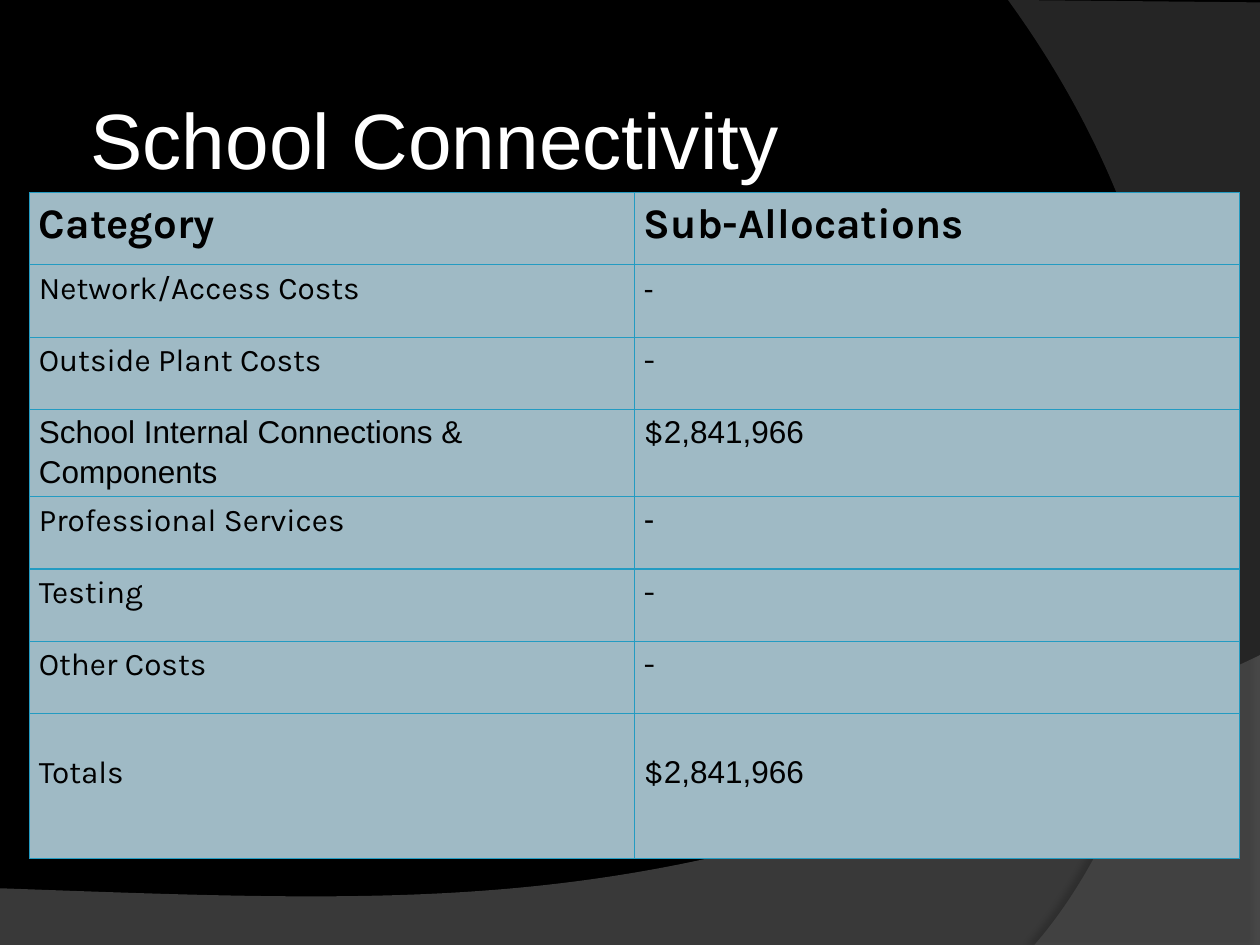
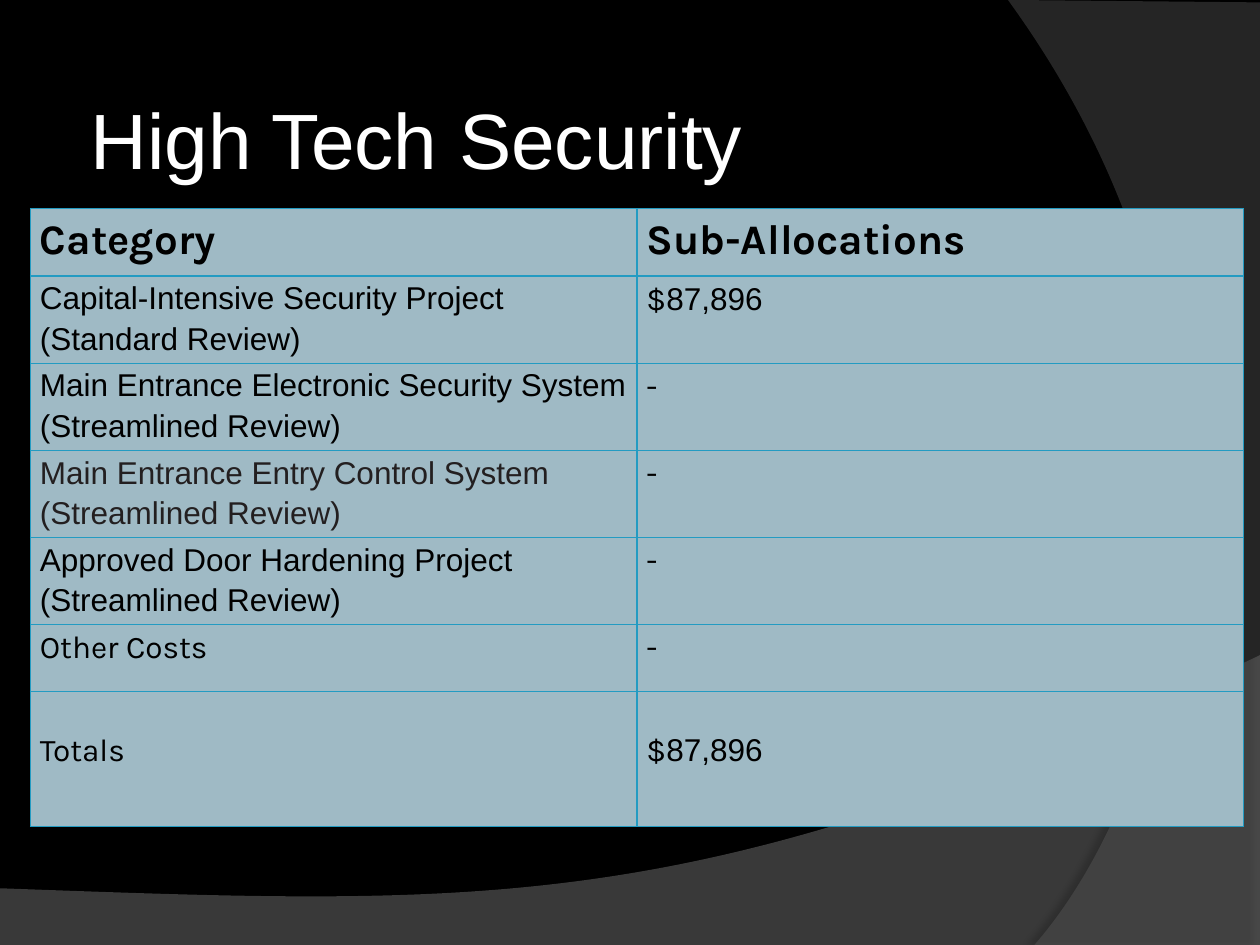
from dataclasses import dataclass

from lxml import etree
from pptx import Presentation
from pptx.dml.color import RGBColor
from pptx.enum import text
from pptx.oxml import ns
from pptx.util import Pt

BLACK = RGBColor(0x00, 0x00, 0x00)
WHITE = RGBColor(0xFF, 0xFF, 0xFF)
CHARCOAL = RGBColor(0x23, 0x1F, 0x20)
BAND_GRAY = RGBColor(0x7F, 0x7F, 0x7F)
FOLD_GRAY = RGBColor(0x5E, 0x5E, 0x5E)
CELL_BLUE = RGBColor(0x9F, 0xBA, 0xC5)
GRID_BLUE = RGBColor(0x23, 0x9B, 0xC2)

KARLA, ARIAL, CALIBRI = "Karla", "Arial", "Calibri"
SLIDE_W, SLIDE_H = 720, 540
TOTALS_GAP = 20


@dataclass
class Entry:
    """One cost category and its sub-allocation."""
    label: str
    amount: str = "-"
    label_font: str = KARLA
    amount_font: str = KARLA
    label_color: RGBColor = BLACK


CONNECTIVITY = [
    Entry("Network/Access Costs", amount_font=CALIBRI),
    Entry("Outside Plant Costs"),
    Entry("School Internal Connections & Components", "$2,841,966", ARIAL),
    Entry("Professional Services", amount_font=ARIAL),
    Entry("Testing"),
    Entry("Other Costs"),
    Entry("Totals", "$2,841,966"),
]
SECURITY = [
    Entry("Capital-Intensive Security Project (Standard Review)", "$87,896", ARIAL),
    Entry("Main Entrance Electronic Security System (Streamlined Review)",
          label_font=ARIAL),
    Entry("Main Entrance Entry Control System (Streamlined Review)",
          label_font=ARIAL, label_color=CHARCOAL),
    Entry("Approved Door Hardening Project (Streamlined Review)",
          label_font=ARIAL),
    Entry("Other Costs"),
    Entry("Totals", "$87,896"),
]


def add_child(parent, tag, **attributes):
    child = etree.SubElement(parent, ns.qn(tag))
    for name, value in attributes.items():
        child.set(name, str(value))
    return child


def add_color(parent, color, opacity=100):
    node = add_child(parent, "a:srgbClr", val=color)
    add_child(node, "a:alpha", val=opacity * 1000)


def bend_last_segment(swoosh, controls):
    """Turn the last straight segment into a cubic Bezier curve."""
    segment = swoosh._element.findall(".//" + ns.qn("a:lnTo"))[-1]
    bend = etree.Element(ns.qn("a:cubicBezTo"))
    for x, y in controls:
        add_child(bend, "a:pt", x=Pt(x) - swoosh.left, y=Pt(y) - swoosh.top)
    bend.append(segment[0])
    segment.getparent().replace(segment, bend)


def add_swoosh(slide, corners, controls, color, opacity,
               shadow_opacity, distance, angle):
    """Translucent panel with one curved edge and a soft shadow."""
    points = [(Pt(x), Pt(y)) for x, y in corners]
    builder = slide.shapes.build_freeform(*points[0])
    builder.add_line_segments(points[1:], close=True)
    swoosh = builder.convert_to_shape()
    bend_last_segment(swoosh, controls)
    swoosh.fill.solid()
    swoosh.fill.fore_color.rgb = color
    tint = swoosh._element.spPr.find(ns.qn("a:solidFill"))[0]
    add_child(tint, "a:alpha", val=opacity * 1000)
    swoosh.line.fill.background()
    swoosh.shadow.inherit = False
    effects = swoosh._element.spPr.find(ns.qn("a:effectLst"))
    shadow = add_child(effects, "a:outerShdw", blurRad=Pt(4), dist=Pt(distance),
                       dir=angle * 60000, algn="ctr", rotWithShape=0)
    add_color(shadow, BLACK, shadow_opacity)


def add_backdrop(slide):
    slide.background.fill.solid()
    slide.background.fill.fore_color.rgb = BLACK
    add_swoosh(slide,
               [(0, 507.6), (0, SLIDE_H), (SLIDE_W, SLIDE_H),
                (SLIDE_W, 374.4), (0, 507.6)],
               [(402.5, 524.9), (281.5, 517.7)], BAND_GRAY, 45, 35, 3.5, 270)
    add_swoosh(slide,
               [(SLIDE_W, 1.4), (SLIDE_W, SLIDE_H), (591.1, SLIDE_H), (576, 0)],
               [(673.2, 445.7), (733, 216)], FOLD_GRAY, 40, 45, 4, 180)


def style_font(font, name, size, color, bold=False):
    font.name, font.size, font.bold = name, Pt(size), bold
    font.color.rgb = color


def add_title(slide, title):
    box = slide.shapes.add_textbox(Pt(48.2), Pt(33.8), Pt(588), Pt(90))
    frame = box.text_frame
    frame.word_wrap = True
    frame.vertical_anchor = text.MSO_ANCHOR.MIDDLE
    frame.margin_left = frame.margin_right = Pt(3.6)
    frame.margin_top = frame.margin_bottom = Pt(3.6)
    frame.text = title
    style_font(frame.paragraphs[0].font, ARIAL, 44.8, WHITE)


def fill_cell(cell, pieces, size=18, color=BLACK, bold=False, top=0):
    """Write (text, font name) pieces into a bordered, tinted cell."""
    for side in ("L", "R", "T", "B"):
        border = add_child(cell._tc.get_or_add_tcPr(), f"a:ln{side}", w=Pt(0.75))
        add_color(add_child(border, "a:solidFill"), GRID_BLUE)
    cell.fill.solid()
    cell.fill.fore_color.rgb = CELL_BLUE
    cell.margin_left = cell.margin_right = Pt(5.4)
    cell.margin_top, cell.margin_bottom = Pt(top), Pt(0.1)
    paragraph = cell.text_frame.paragraphs[0]
    paragraph.line_spacing = 1.15
    paragraph.space_before = paragraph.space_after = Pt(0)
    for words, font_name in pieces:
        run = paragraph.add_run()
        run.text = words
        style_font(run.font, font_name, size, color, bold)


def amount_pieces(entry):
    if entry.amount.startswith("$"):
        return [("$", KARLA), (entry.amount[1:], ARIAL)]
    return [(entry.amount, entry.amount_font)]


def add_allocations(slide, entries, left, top, column_width, row_height):
    """Category table whose last row, the totals, is twice as high."""
    heights = [row_height] * len(entries) + [2 * row_height]
    table = slide.shapes.add_table(
        len(heights), 2, Pt(left), Pt(top),
        Pt(2 * column_width), Pt(sum(heights))).table
    table.first_row = table.horz_banding = False
    for column in table.columns:
        column.width = Pt(column_width)
    for row, height in zip(table.rows, heights):
        row.height = Pt(height)

    for column, heading in enumerate(("Category", "Sub-Allocations")):
        fill_cell(table.cell(0, column), [(heading, KARLA)], size=24, bold=True)
    for row, entry in enumerate(entries, start=1):
        gap = TOTALS_GAP if row == len(entries) else 0
        fill_cell(table.cell(row, 0), [(entry.label, entry.label_font)],
                  color=entry.label_color, top=gap)
        fill_cell(table.cell(row, 1), amount_pieces(entry), top=gap)


def add_allocation_slide(deck, title, entries, **placement):
    slide = deck.slides.add_slide(deck.slide_layouts[6])
    add_backdrop(slide)
    add_title(slide, title)
    add_allocations(slide, entries, **placement)


def main():
    deck = Presentation()
    deck.slide_width, deck.slide_height = Pt(SLIDE_W), Pt(SLIDE_H)
    add_allocation_slide(deck, "School Connectivity", CONNECTIVITY,
                         left=16.8, top=110, column_width=345.8, row_height=41.35)
    add_allocation_slide(deck, "High Tech Security", SECURITY,
                         left=17.4, top=119.2, column_width=346.6, row_height=38.5)
    deck.save("out.pptx")


if __name__ == "__main__":
    main()
